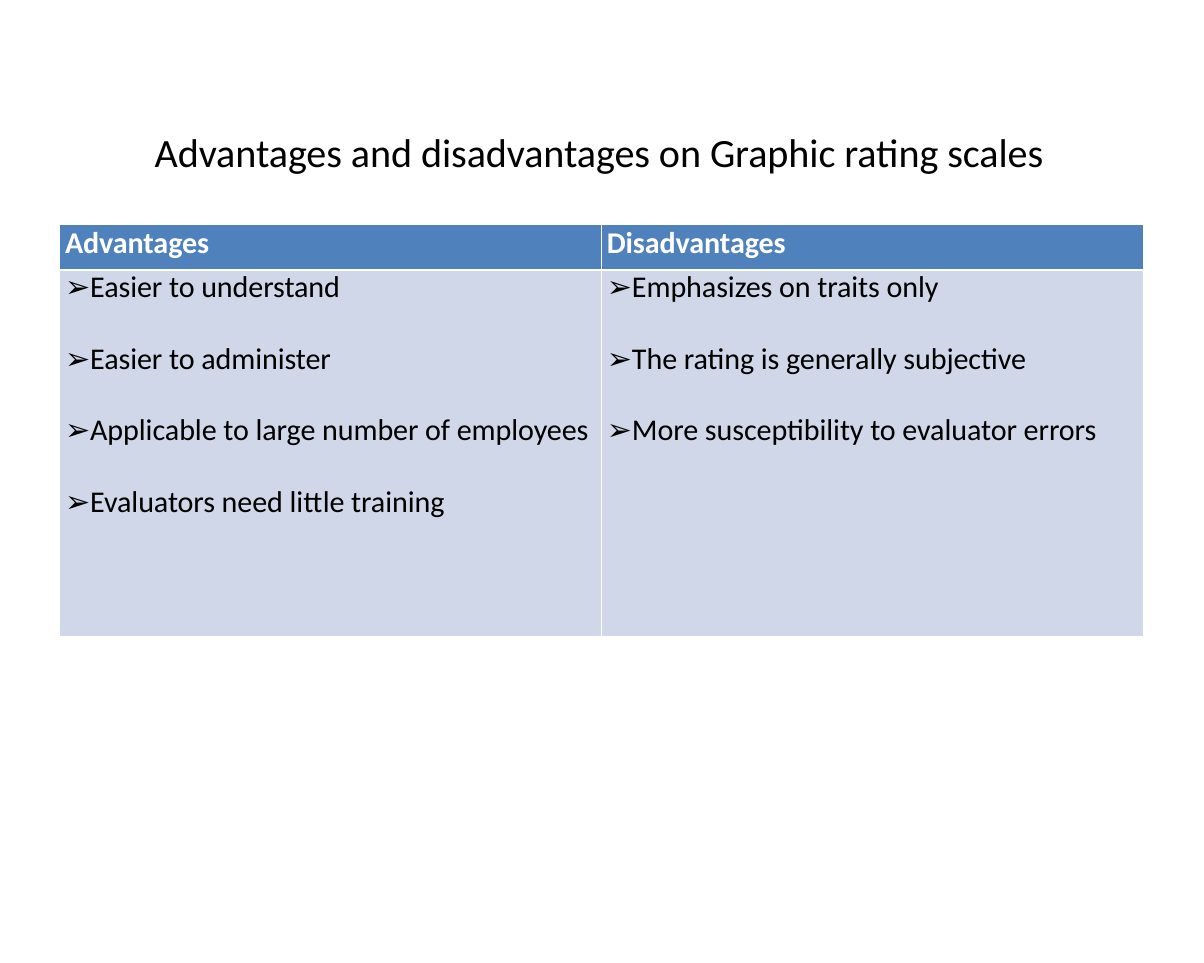
from dataclasses import dataclass

from lxml import etree
from pptx import Presentation
from pptx.dml.color import RGBColor
from pptx.oxml.ns import qn
from pptx.util import Inches, Pt


@dataclass(frozen=True)
class Theme:
    """Colours, fonts and sizes in points for the slide."""
    font: str = "Calibri"
    bullet_font: str = "Arial"
    ink: str = "000000"
    white: str = "FFFFFF"
    header: str = "4F81BC"
    body: str = "D0D7E8"
    title_size: float = 48
    text_size: float = 36
    line: float = 43
    gap: float = 42.7
    tracking: float = -0.1
    thin: float = 1
    thick: float = 3


THEME = Theme()
TITLE = "Advantages and disadvantages on Graphic rating scales"
COLUMNS = {
    "Advantages": [
        "Easier to understand",
        "Easier to administer",
        "Applicable to large number of employees",
        "Evaluators need little training",
    ],
    "Disadvantages": [
        "Emphasizes on traits only",
        "The rating is generally subjective",
        "More susceptibility to evaluator errors",
    ],
}


def add_run(p, text, size, color, bold=False):
    """Add one styled run to a paragraph."""
    r = p.add_run()
    r.text = text
    r.font.name = THEME.font
    r.font.size = Pt(size)
    r.font.bold = bold
    r.font.color.rgb = RGBColor.from_string(color)
    r.font._element.set("spc", str(round(THEME.tracking * 100)))


def add_title(s):
    """Add the slide title."""
    box = s.shapes.add_textbox(Inches(1.13), Inches(2.11), Inches(17.73), Inches(0.81))
    tf = box.text_frame
    tf.word_wrap = True
    tf.margin_left = Inches(1.44)
    tf.margin_top = tf.margin_right = tf.margin_bottom = 0
    add_run(tf.paragraphs[0], TITLE, THEME.title_size, THEME.ink)


def set_bullet(p):
    """Give a paragraph an arrow bullet with a hanging indent."""
    pPr = p._p.get_or_add_pPr()
    pPr.set("marL", str(Inches(0.41)))
    pPr.set("indent", str(-Inches(0.41)))
    etree.SubElement(pPr, qn("a:buFont"), typeface=THEME.bullet_font)
    etree.SubElement(pPr, qn("a:buChar"), char="➢")


def style_cell(cell, fill, top, bottom):
    """Set margins, white borders and fill of a cell."""
    cell.margin_left = Inches(0.09)
    cell.margin_top = cell.margin_right = cell.margin_bottom = 0
    tcPr = cell._tc.get_or_add_tcPr()
    widths = {"lnL": THEME.thin, "lnR": THEME.thin, "lnT": top, "lnB": bottom}
    for side, width in widths.items():
        ln = etree.SubElement(tcPr, qn(f"a:{side}"), w=str(Pt(width)))
        solid = etree.SubElement(ln, qn("a:solidFill"))
        etree.SubElement(solid, qn("a:srgbClr"), val=THEME.white)
    cell.fill.solid()
    cell.fill.fore_color.rgb = RGBColor.from_string(fill)


def fill_header(cell, text):
    """Write a column heading."""
    style_cell(cell, THEME.header, THEME.thin, THEME.thick)
    add_run(cell.text_frame.paragraphs[0], text, THEME.text_size, THEME.white, True)


def fill_list(cell, items):
    """Write a bulleted list into a body cell."""
    style_cell(cell, THEME.body, THEME.thick, THEME.thin)
    tf = cell.text_frame
    for i, item in enumerate(items):
        p = tf.add_paragraph() if i else tf.paragraphs[0]
        p.line_spacing = Pt(THEME.line)
        p.space_before = Pt(THEME.gap if i else 0)
        set_bullet(p)
        add_run(p, item, THEME.text_size, THEME.ink)


def add_comparison(s):
    """Add the table of advantages and disadvantages."""
    frame = s.shapes.add_table(2, len(COLUMNS), Inches(0.99), Inches(3.73),
                               Inches(18), Inches(6.85))
    table = frame.table
    table.rows[0].height = Inches(0.75)
    table.rows[1].height = Inches(6.1)
    for col, (heading, items) in enumerate(COLUMNS.items()):
        fill_header(table.cell(0, col), heading)
        fill_list(table.cell(1, col), items)


def main():
    """Build and save the slide."""
    prs = Presentation()
    prs.slide_width = Inches(20)
    prs.slide_height = Inches(16)
    s = prs.slides.add_slide(prs.slide_layouts[6])
    add_title(s)
    add_comparison(s)
    prs.save("out.pptx")


if __name__ == "__main__":
    main()
